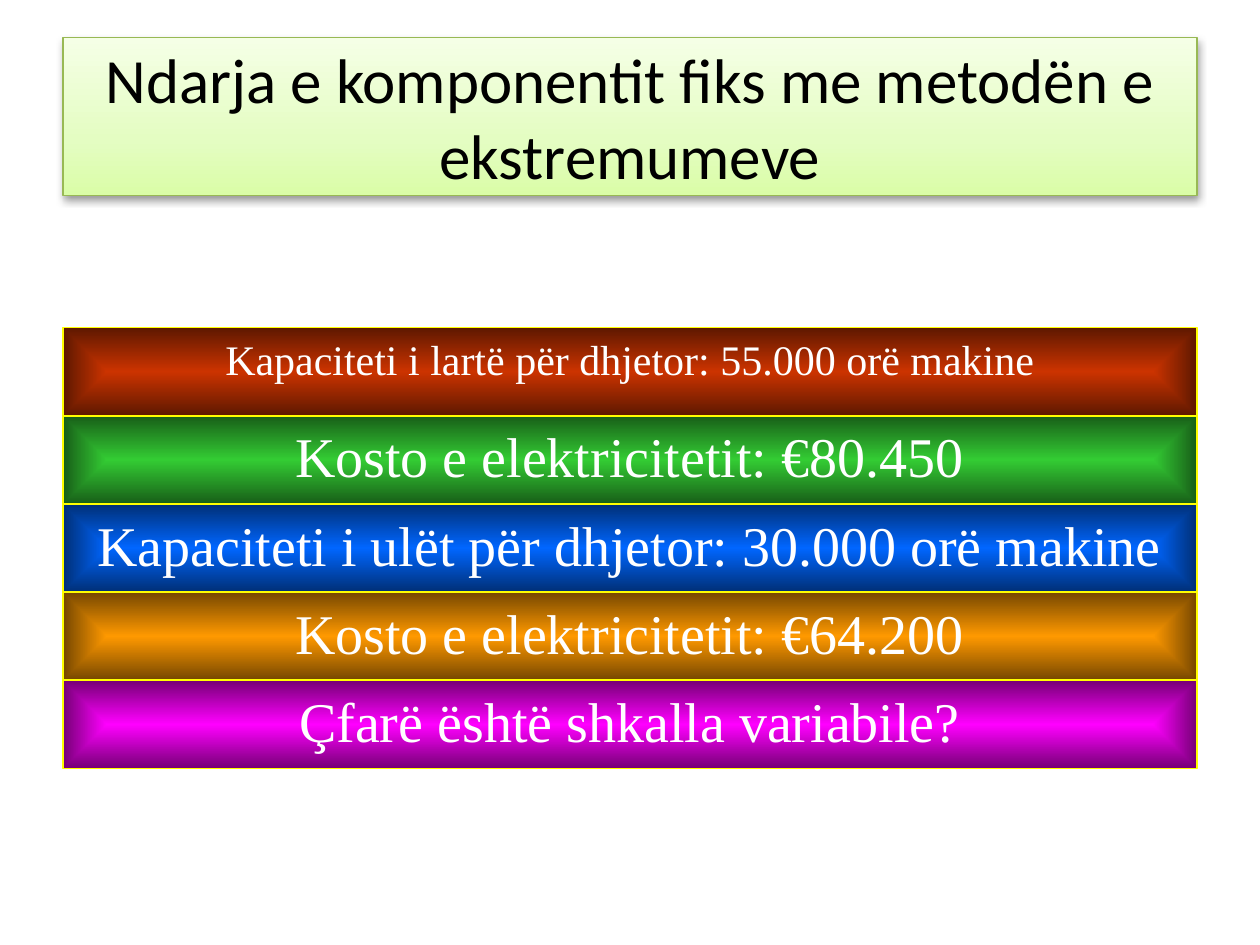
from lxml import etree
from pptx import Presentation
from pptx.dml.color import RGBColor
from pptx.enum.shapes import MSO_SHAPE
from pptx.enum.text import MSO_ANCHOR, PP_ALIGN
from pptx.oxml import parse_xml
from pptx.oxml.ns import nsdecls, qn
from pptx.util import Inches, Pt

COLORS = {
    "title_text": "000000",
    "title_line": "98B954",
    "title_bottom": "DAFDA7",
    "title_middle": "E4FDC2",
    "title_top": "F5FFE6",
    "shadow": "000000",
    "row_text": "FFFFFF",
    "row_line": "FFFF00",
}
UPWARD = '<a:lin ang="16200000" scaled="0"/>'
FROM_CENTER = ('<a:path path="rect"><a:fillToRect l="50000" t="50000" '
               'r="50000" b="50000"/></a:path>')


class SlideBuilder:
    left, width = 0.5, 9
    title_font, row_font = "Calibri", "Times New Roman"

    def __init__(self, slide):
        self.slide = slide

    def box(self, top, height, stops, direction, line, line_width):
        """Add a full-width rectangle with a gradient fill."""
        box = self.slide.shapes.add_shape(
            MSO_SHAPE.RECTANGLE, Inches(self.left), Inches(top),
            Inches(self.width), Inches(height))
        box.shadow.inherit = False
        box.line.color.rgb = RGBColor.from_string(COLORS[line])
        box.line.width = Pt(line_width)
        stop_xml = "".join(
            f'<a:gs pos="{percent * 1000}"><a:srgbClr val="{color}"/></a:gs>'
            for percent, color in stops)
        gradient = parse_xml(
            f'<a:gradFill {nsdecls("a")} rotWithShape="1">'
            f'<a:gsLst>{stop_xml}</a:gsLst>{direction}</a:gradFill>')
        box._element.spPr.find(qn("a:prstGeom")).addnext(gradient)
        return box

    def text(self, box, wording, font, size, color, anchor, wrap):
        frame = box.text_frame
        frame.word_wrap = wrap
        frame.vertical_anchor = anchor
        paragraph = frame.paragraphs[0]
        paragraph.text = wording
        paragraph.alignment = PP_ALIGN.CENTER
        paragraph.font.name = font
        paragraph.font.size = Pt(size)
        paragraph.font.color.rgb = RGBColor.from_string(COLORS[color])

    def drop_shadow(self, box, blur, distance, opacity):
        effects = box._element.spPr.find(qn("a:effectLst"))
        shadow = etree.SubElement(
            effects, qn("a:outerShdw"), blurRad=str(Pt(blur)),
            dist=str(Pt(distance)), dir="5400000", rotWithShape="0")
        color = etree.SubElement(shadow, qn("a:srgbClr"), val=COLORS["shadow"])
        etree.SubElement(color, qn("a:alpha"), val=str(opacity * 1000))

    def title(self, wording):
        stops = [(0, COLORS["title_bottom"]), (35, COLORS["title_middle"]),
                 (100, COLORS["title_top"])]
        box = self.box(0.3, 1.25, stops, UPWARD, "title_line", 0.75)
        self.drop_shadow(box, blur=5, distance=1.6, opacity=38)
        self.text(box, wording, self.title_font, 36, "title_text",
                  MSO_ANCHOR.MIDDLE, True)

    def row(self, top, height, wording, size, center, edge):
        box = self.box(top, height, [(0, center), (100, edge)], FROM_CENTER,
                       "row_line", 1)
        self.text(box, wording, self.row_font, size, "row_text",
                  MSO_ANCHOR.TOP, False)


def main():
    presentation = Presentation()
    presentation.slide_width = Inches(10)
    presentation.slide_height = Inches(7.5)
    builder = SlideBuilder(
        presentation.slides.add_slide(presentation.slide_layouts[6]))

    # Title banner
    builder.title("Ndarja e komponentit fiks me metodën e ekstremumeve")

    # Stacked rows: wording, text size, centre colour, edge colour
    rows = [
        ("Kapaciteti i lartë për dhjetor: 55.000 orë makine", 24, "CC3300", "5E1800"),
        ("Kosto e elektricitetit: €80.450", 32, "33CC33", "185E18"),
        ("Kapaciteti i ulët për dhjetor: 30.000 orë makine", 32, "0066FF", "002F76"),
        ("Kosto e elektricitetit: €64.200", 32, "FF9900", "764700"),
        ("Çfarë është shkalla variabile?", 32, "FF00FF", "760076"),
    ]
    first_top, row_height = 2.6, 0.7
    for index, row in enumerate(rows):
        builder.row(first_top + index * row_height, row_height, *row)

    presentation.save("out.pptx")


if __name__ == "__main__":
    main()
